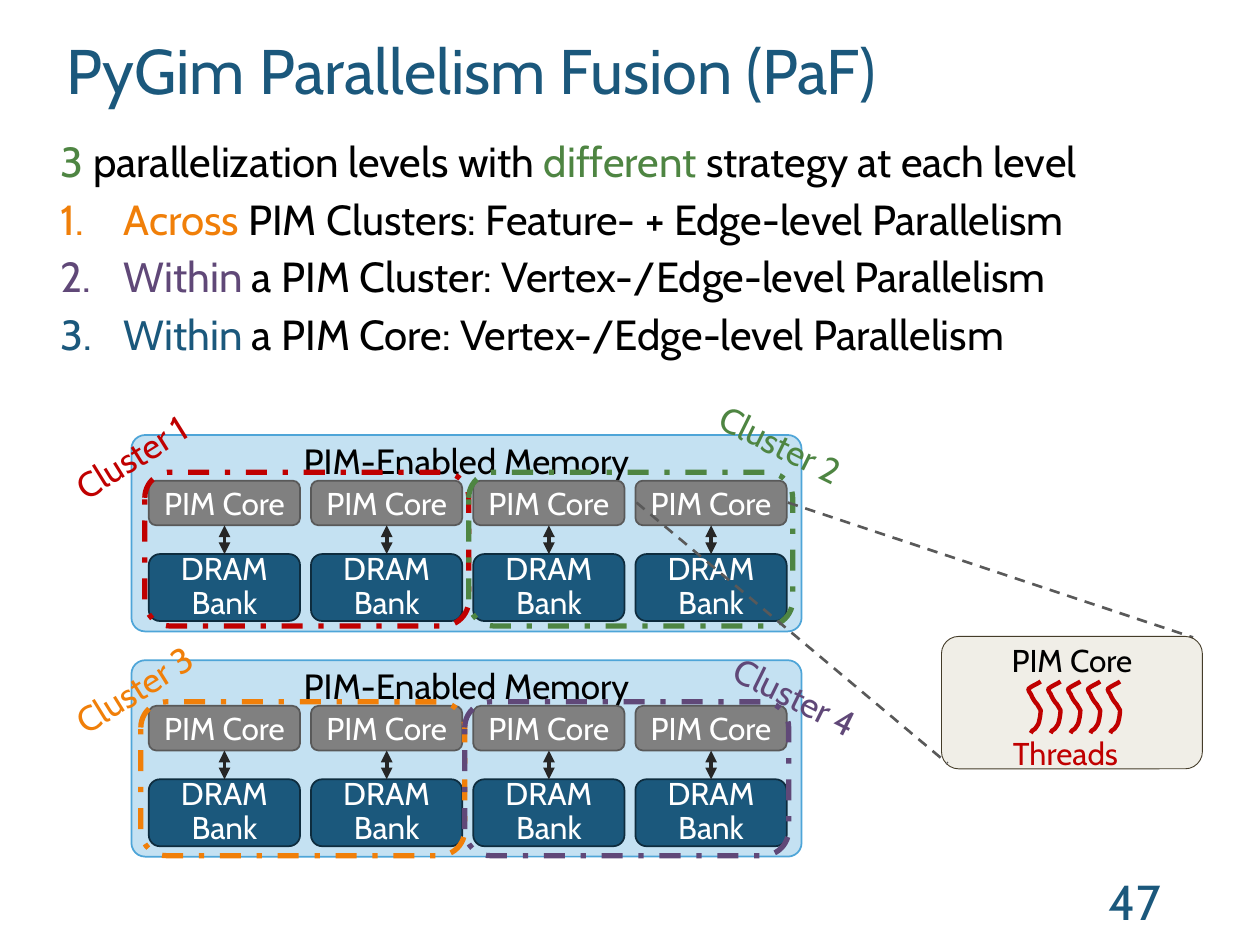
from dataclasses import dataclass

from lxml import etree
from pptx import Presentation
from pptx.dml.color import RGBColor
from pptx.enum.dml import MSO_LINE
from pptx.enum.shapes import MSO_CONNECTOR, MSO_SHAPE
from pptx.enum.text import MSO_ANCHOR, MSO_AUTO_SIZE, PP_ALIGN
from pptx.oxml.ns import qn
from pptx.util import Cm, Pt

ROUNDED = MSO_SHAPE.ROUNDED_RECTANGLE
STRAIGHT = MSO_CONNECTOR.STRAIGHT
DASH, DASH_DOT = MSO_LINE.DASH, MSO_LINE.DASH_DOT
TOP, MIDDLE = MSO_ANCHOR.TOP, MSO_ANCHOR.MIDDLE
LEFT, CENTER, RIGHT = PP_ALIGN.LEFT, PP_ALIGN.CENTER, PP_ALIGN.RIGHT


@dataclass(frozen=True)
class Theme:
    """Font, colours and type sizes of the slide."""
    font: str = "Cabin"
    black: str = "000000"
    white: str = "FFFFFF"
    blue: str = "1B587C"
    navy: str = "0E2C3E"
    sky: str = "C4E1F2"
    sky_edge: str = "4EA5D8"
    gray: str = "808080"
    dark_gray: str = "595959"
    charcoal: str = "262626"
    red: str = "C00000"
    green: str = "4E8542"
    orange: str = "F07F09"
    purple: str = "604878"
    sand: str = "E3DED1"
    sand_edge: str = "443C29"
    title: int = 36
    number: int = 28
    body: int = 24
    label: int = 20
    small: int = 18


THEME = Theme()
ROW_PITCH = 4.54
COLUMN_PITCH = 3.27
BLOCK_WIDTH = 3.05
CLUSTER_WIDTH = 6.53
THREAD_PITCH = 0.4
THREAD_POINTS = (
    (0.25, 0), (0.18, 0.05), (0.08, 0.08), (0, 0.15),
    (0, 0.18), (0.03, 0.23), (0.05, 0.25),
    (0.08, 0.33), (0.13, 0.41), (0.18, 0.46), (0.25, 0.58),
    (0.25, 0.61), (0.23, 0.84), (0.18, 0.89),
    (0.15, 0.94), (0.13, 0.97), (0.08, 0.99), (0.05, 1.04),
)
THREAD_CURVE_STARTS = (0, 3, 6, 10, 13)


def place(shape, left, top, width, height):
    """Move and size a shape, in centimetres."""
    shape.left, shape.top = Cm(left), Cm(top)
    shape.width, shape.height = Cm(width), Cm(height)


def fill_solid(shape, color):
    """Fill a shape with one colour."""
    shape.fill.solid()
    shape.fill.fore_color.rgb = RGBColor.from_string(color)


def style_paragraph(paragraph, size, color, align=LEFT, spacing=None):
    """Format a paragraph whose runs agree."""
    paragraph.alignment = align
    paragraph.line_spacing = spacing
    paragraph.font.name = THEME.font
    paragraph.font.size = Pt(size)
    paragraph.font.color.rgb = RGBColor.from_string(color)


def write(shape, text, size, color, align=LEFT, anchor=TOP, spacing=None):
    """Put one formatted paragraph in a shape."""
    frame = shape.text_frame
    frame.word_wrap = True
    frame.vertical_anchor = anchor
    frame.text = text
    style_paragraph(frame.paragraphs[0], size, color, align, spacing)


def style_line(line, color, width, dash=None):
    """Set the colour, width and dash of a line."""
    line.color.rgb = RGBColor.from_string(color)
    line.width = Pt(width)
    if dash is not None:
        line.dash_style = dash


def add_text(slide, text, box, size, color, align=LEFT, anchor=TOP, rotation=0):
    """Add a text box."""
    shape = slide.shapes.add_textbox(*map(Cm, box))
    shape.rotation = rotation
    write(shape, text, size, color, align, anchor)


def add_block(slide, box, fill, edge, width=1, corner=None, dash=None):
    """Add a rounded rectangle, hollow when fill is None."""
    shape = slide.shapes.add_shape(ROUNDED, *map(Cm, box))
    shape.shadow.inherit = False
    if corner is not None:
        shape.adjustments[0] = corner
    if fill is None:
        shape.fill.background()
    else:
        fill_solid(shape, fill)
    style_line(shape.line, edge, width, dash)
    return shape


def add_line(slide, start, end, color, width, dash=None, arrows=False):
    """Add a straight connector, with arrowheads at both ends if asked."""
    connector = slide.shapes.add_connector(STRAIGHT, *map(Cm, start + end))
    style_line(connector.line, color, width, dash)
    properties = connector.element.spPr
    if arrows:
        outline = properties.find(qn("a:ln"))
        for tag in ("a:headEnd", "a:tailEnd"):
            etree.SubElement(outline, qn(tag), type="triangle")
    etree.SubElement(properties, qn("a:effectLst"))


def add_levels(slide):
    """Fill the body with the lead sentence and the numbered levels."""
    body = slide.placeholders[1]
    place(body, 0.97, 2.47, 24.08, 4.83)
    fill_solid(body, THEME.white)
    frame = body.text_frame
    frame.auto_size = MSO_AUTO_SIZE.NONE
    frame.vertical_anchor = TOP
    levels = (
        (("3", THEME.green), (" parallelization levels with ", THEME.black),
         ("different", THEME.green), (" strategy at each level", THEME.black)),
        (("Across", THEME.orange),
         (" PIM Clusters: Feature- + Edge-level Parallelism", THEME.black)),
        (("Within", THEME.purple),
         (" a PIM Cluster: Vertex-/Edge-level Parallelism", THEME.black)),
        (("Within", THEME.blue),
         (" a PIM Core: Vertex-/Edge-level Parallelism", THEME.black)),
    )
    for index, runs in enumerate(levels):
        paragraph = frame.add_paragraph() if index else frame.paragraphs[0]
        paragraph.space_before = Pt(0)
        properties = paragraph._p.get_or_add_pPr()
        indent = Cm(1.27) if index else 0
        properties.set("marL", str(indent))
        properties.set("indent", str(-indent))
        if index:
            etree.SubElement(properties, qn("a:buFont"), typeface="+mj-lt")
            etree.SubElement(properties, qn("a:buAutoNum"), type="arabicPeriod")
        else:
            etree.SubElement(properties, qn("a:buNone"))
        style_paragraph(paragraph, THEME.body, THEME.black, spacing=1.14)
        for text, color in runs:
            run = paragraph.add_run()
            run.text = text
            run.font.color.rgb = RGBColor.from_string(color)


def add_memory(slide, top):
    """Add one memory panel with its four core and bank pairs."""
    panel = add_block(slide, (2.65, top, 13.51, 3.96), THEME.sky, THEME.sky_edge, corner=0.07)
    panel.text_frame.margin_top = 0
    write(panel, "PIM-Enabled Memory", THEME.label, THEME.black, CENTER)
    for column in range(4):
        left = 3 + column * COLUMN_PITCH
        middle = left + BLOCK_WIDTH / 2
        bank = add_block(slide, (left, top + 2.4, BLOCK_WIDTH, 1.35), THEME.blue, THEME.navy)
        write(bank, "DRAM Bank", THEME.small, THEME.white, CENTER, MIDDLE, 0.9)
        core = add_block(slide, (left, top + 0.92, BLOCK_WIDTH, 0.9), THEME.gray, THEME.dark_gray)
        core.text_frame.margin_left = core.text_frame.margin_right = Cm(0.2)
        write(core, "PIM Core", THEME.small, THEME.white, CENTER, MIDDLE)
        add_line(slide, (middle, top + 1.82), (middle, top + 2.4), THEME.charcoal, 2.25, arrows=True)


def add_cluster(slide, name, color, corner, label, rotation):
    """Add a dashed cluster frame and its slanted name."""
    add_block(slide, (*corner, CLUSTER_WIDTH, 3.1), None, color, 3, dash=DASH_DOT)
    add_text(slide, name, (*label, 3.48, 1.12), THEME.label, color, rotation=rotation)


def add_thread(slide, left, top):
    """Add one wavy thread, turning triples of points into curves."""
    start, *rest = [(Cm(left + x), Cm(top + y)) for x, y in THREAD_POINTS]
    builder = slide.shapes.build_freeform(*start)
    builder.add_line_segments(rest, close=False)
    thread = builder.convert_to_shape()
    segments = list(thread.element.iter(qn("a:lnTo")))
    for first in THREAD_CURVE_STARTS:
        curve = etree.Element(qn("a:cubicBezTo"))
        segments[first].addprevious(curve)
        for segment in segments[first:first + 3]:
            curve.append(segment[0])
            segment.getparent().remove(segment)
    thread.shadow.inherit = False
    thread.fill.background()
    style_line(thread.line, THEME.red, 2.5)


def add_core_detail(slide):
    """Add the enlarged core, its threads and its guide lines."""
    add_line(slide, (15.88, 10.13), (24.05, 12.85), THEME.dark_gray, 1.5, DASH)
    core = add_block(slide, (18.98, 12.83, 5.26, 2.67), THEME.sand, THEME.sand_edge, 0.5, 0.13)
    color = core.element.spPr.find(qn("a:solidFill")).find(qn("a:srgbClr"))
    etree.SubElement(color, qn("a:alpha"), val="50000")
    core.text_frame.margin_top = 0
    write(core, "PIM Core", THEME.small, THEME.black, CENTER)
    add_line(slide, (12.83, 10.13), (19.1, 15.39), THEME.dark_gray, 1.5, DASH)
    add_text(slide, "Threads", (20.17, 14.67, 3.12, 1.02), THEME.small, THEME.red)
    for index in range(5):
        add_thread(slide, 20.73 + index * THREAD_PITCH, 13.74)


def main():
    """Build the slide and save it."""
    presentation = Presentation()
    presentation.slide_width, presentation.slide_height = Cm(25.4), Cm(19.05)
    slide = presentation.slides.add_slide(presentation.slide_layouts[1])
    title = slide.shapes.title
    place(title, 1.09, 0.33, 23.11, 2.34)
    write(title, "PyGim Parallelism Fusion (PaF)", THEME.title, THEME.blue, LEFT, MIDDLE, 0.9)
    add_levels(slide)
    add_text(slide, "47", (17.93, 17.65, 5.72, 1.02), THEME.number, THEME.blue, RIGHT, MIDDLE)
    for row in range(2):
        add_memory(slide, 8.77 + row * ROW_PITCH)
    clusters = (
        ("Cluster 1", THEME.red, (2.92, 9.52), (1.12, 8.53), 328.2),
        ("Cluster 2", THEME.green, (2.92 + CLUSTER_WIDTH, 9.52), (14.16, 8.48), 26.3),
        ("Cluster 3", THEME.orange, (2.84, 14.15), (1.12, 13.25), 328.2),
        ("Cluster 4", THEME.purple, (2.84 + CLUSTER_WIDTH, 14.15), (14.45, 13.56), 26.3),
    )
    for cluster in clusters:
        add_cluster(slide, *cluster)
    add_core_detail(slide)
    presentation.save("out.pptx")


if __name__ == "__main__":
    main()
